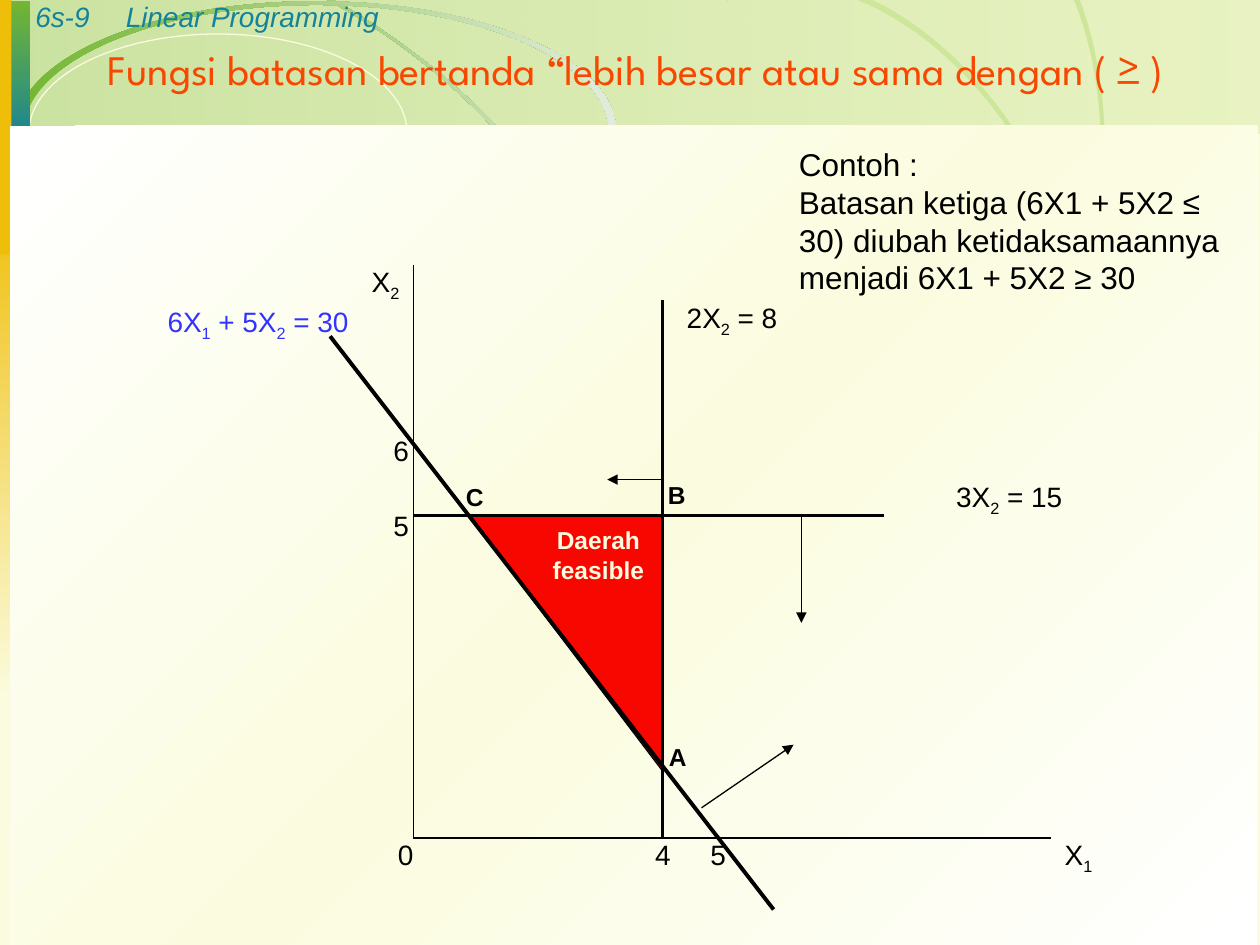
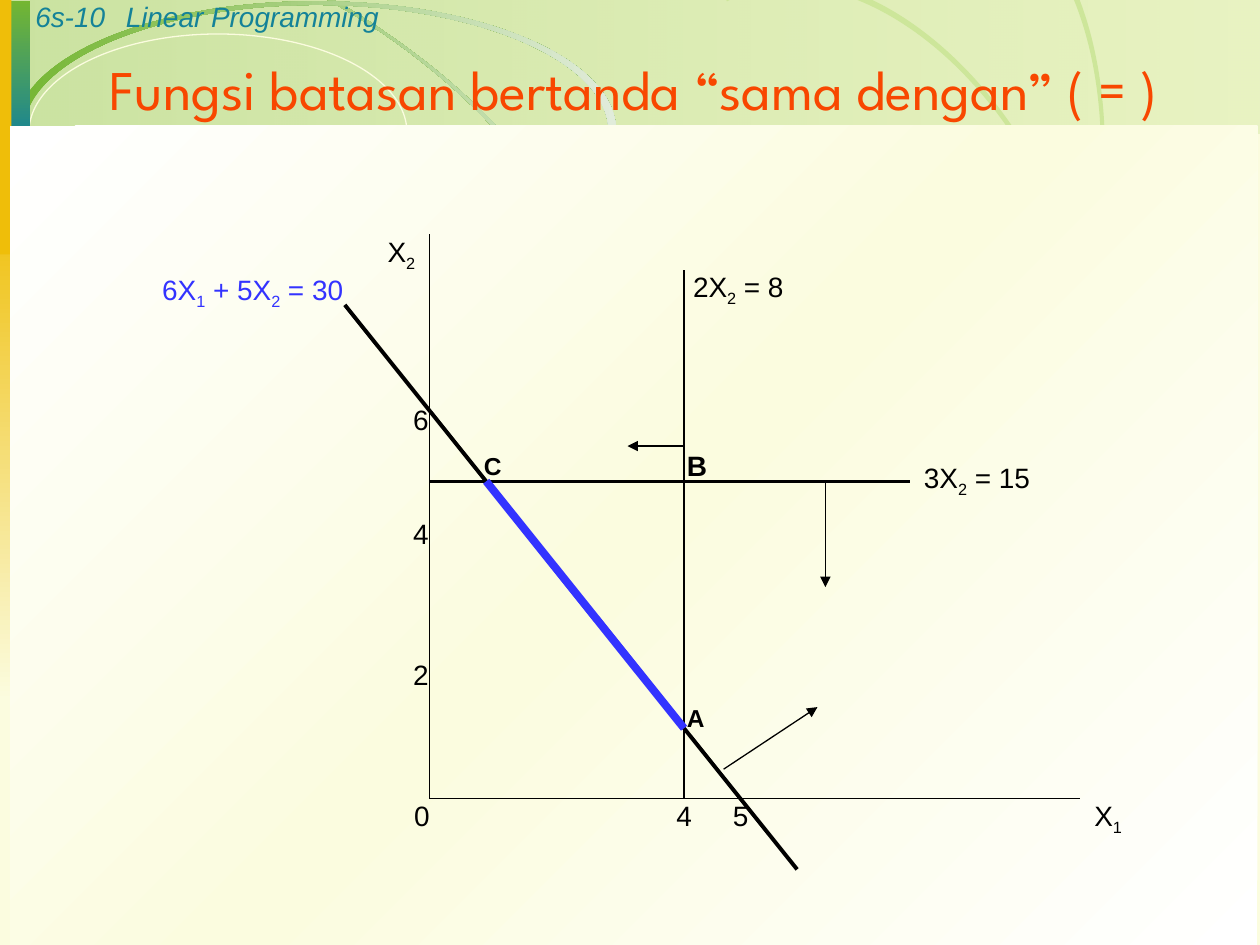
from lxml import etree
from pptx import Presentation
from pptx.dml.color import RGBColor
from pptx.enum.shapes import MSO_CONNECTOR as CONN, MSO_SHAPE as SHAPE
from pptx.enum.text import MSO_ANCHOR as ANCHOR, PP_ALIGN as ALIGN
from pptx.oxml.ns import qn
from pptx.util import Inches, Pt

W, H = 10, 7.5
BODY, HEADING = "Arial", "League Spartan"
COLORS = {
    "cream": "FBFCDF", "white": "FFFFFF", "black": "000000", "green": "74B632",
    "lime": "BCDD7B", "mist": "E1ECDB", "leaf": "CDE69A", "teal": "148298",
    "gold": "EFBE09", "orange": "F84700", "red": "F80600", "blue": "3333FF",
}

RIBBONS = [
    ((0.16, 0.11, 4.77, 1.99), 17.5, ("green", "mist"),
     [(0.33, 0.41), (0.49, -0.1, 1.61, -0.2, 2.84, 0.18), (4.06, 0.57, 4.92, 1.29, 4.76, 1.8),
      (4.82, 1.82), (4.99, 1.3, 4.1, 0.55, 2.84, 0.16), (1.59, -0.24, 0.43, -0.14, 0.27, 0.39)]),
    ((5.07, 0.24, 4.77, 2.59), 318.2, ("leaf",),
     [(5.73, 3.08), (6.19, 3.6, 7.34, 3.33, 8.3, 2.48), (9.25, 1.62, 9.65, 0.51, 9.19, -0.01),
      (9.24, -0.05), (9.71, 0.48, 9.3, 1.62, 8.32, 2.5), (7.34, 3.38, 6.16, 3.66, 5.68, 3.13)]),
    ((4.5, 0.52, 4.77, 3.06), 300.7, ("leaf",),
     [(5.7, 4.04), (6.41, 4.46, 7.51, 3.91, 8.17, 2.81), (8.82, 1.71, 8.78, 0.47, 8.07, 0.05),
      (8.1, 0), (8.83, 0.43, 8.87, 1.7, 8.2, 2.83), (7.53, 3.96, 6.39, 4.53, 5.67, 4.1)]),
    ((0.12, 0.01, 4.77, 2.07), 0, ("green", "mist"),
     [(0.19, 1.04), (0.19, 0.49, 1.23, 0.04, 2.51, 0.04), (3.79, 0.04, 4.83, 0.49, 4.83, 1.04),
      (4.89, 1.04), (4.89, 0.47, 3.83, 0.01, 2.51, 0.01), (1.19, 0.01, 0.12, 0.47, 0.12, 1.04)]),
]


def rgb(name):
    return RGBColor.from_string(COLORS[name])


def paint(sp, names, angle=0, alphas=None):
    sp.shadow.inherit = False
    if len(names) == 1:
        sp.fill.solid()
        sp.fill.fore_color.rgb = rgb(names[0])
        return
    sp.fill.gradient()
    grad = sp._element.spPr.find(qn("a:gradFill"))
    for child in list(grad):
        grad.remove(child)
    stops = etree.SubElement(grad, qn("a:gsLst"))
    for i, name in enumerate(names):
        stop = etree.SubElement(stops, qn("a:gs"), pos=str(100000 * i // (len(names) - 1)))
        color = etree.SubElement(stop, qn("a:srgbClr"), val=COLORS[name])
        if alphas:
            etree.SubElement(color, qn("a:alpha"), val=str(alphas[i] * 1000))
    etree.SubElement(grad, qn("a:lin"), ang=str(angle * 60000), scaled="0")


def add_block(s, box, names, angle=0, alphas=None):
    sp = s.shapes.add_shape(SHAPE.RECTANGLE, *map(Inches, box))
    paint(sp, names, angle, alphas)
    sp.line.fill.background()


def add_ribbon(s, box, turn, names, outline):
    left, top, width, height = map(Inches, box)
    builder = s.shapes.build_freeform(left, top)
    builder.add_line_segments([(left + width, top), (left + width, top + height)])
    sp = builder.convert_to_shape()
    curve = next(sp._element.iter(qn("a:path")))
    for child in list(curve):
        curve.remove(child)
    curve.set("w", str(width))
    curve.set("h", str(height))
    for i, step in enumerate(outline):
        tag = "a:moveTo" if i == 0 else "a:lnTo" if len(step) == 2 else "a:cubicBezTo"
        segment = etree.SubElement(curve, qn(tag))
        for x, y in zip(step[::2], step[1::2]):
            etree.SubElement(segment, qn("a:pt"), x=str(Inches(x) - left), y=str(Inches(y) - top))
    etree.SubElement(curve, qn("a:close"))
    sp.rotation = turn
    paint(sp, names)
    sp.line.fill.background()


def add_text(s, box, lines, size, color="black", font=BODY, align=ALIGN.LEFT,
             anchor=ANCHOR.TOP, bold=False, italic=False, left=0, right=0):
    tf = s.shapes.add_textbox(*map(Inches, box)).text_frame
    tf.word_wrap = True
    tf.vertical_anchor = anchor
    tf.margin_left, tf.margin_right = Inches(left), Inches(right)
    tf.margin_top = tf.margin_bottom = 0
    for i, line in enumerate(lines):
        p = tf.paragraphs[0] if i == 0 else tf.add_paragraph()
        p.alignment = align
        head, *tails = line.split("_")
        runs = [(head, False)]
        for tail in tails:
            runs += [(tail[0], True), (tail[1:], False)]
        for text, lowered in runs:
            if not text:
                continue
            r = p.add_run()
            r.text = text
            r.font.name, r.font.size = font, Pt(size)
            r.font.bold, r.font.italic = bold, italic
            r.font.color.rgb = rgb(color)
            if lowered:
                r._r.get_or_add_rPr().set("baseline", "-25000")


class Plot:
    COLS, ROWS = 11.5, 8

    def __init__(self, s, left, bottom, width, height):
        self.s, self.left, self.bottom = s, left, bottom
        self.col, self.row = width / self.COLS, height / self.ROWS

    def at(self, x, y):
        return self.left + x * self.col, self.bottom - y * self.row

    def line(self, start, end, width=0.75, color="black", arrow=False):
        ends = map(Inches, (*self.at(*start), *self.at(*end)))
        cn = self.s.shapes.add_connector(CONN.STRAIGHT, *ends)
        cn.line.width = Pt(width)
        cn.line.color.rgb = rgb(color)
        if arrow:
            etree.SubElement(cn.line._get_or_add_ln(), qn("a:tailEnd"), type="triangle")
        etree.SubElement(cn._element.spPr, qn("a:effectLst"))

    def label(self, text, x, y, cols=1, size=16, align=ALIGN.CENTER, **style):
        box = (*self.at(x, y), cols * self.col, self.row)
        add_text(self.s, box, [text], size, align=align, **style)

    def feasible_area(self):
        box = (*self.at(1, 4.5), 3.5 * self.col, 3.57 * self.row)
        sp = self.s.shapes.add_shape(SHAPE.RIGHT_TRIANGLE, *map(Inches, box))
        sp.rotation = 180
        paint(sp, ("red",))
        sp.line.color.rgb = rgb("black")
        sp.line.width = Pt(0.75)
        add_text(self.s, (*self.at(2.34, 4.36), 2 * self.col, 1.2 * self.row),
                 ["Daerah", "feasible"], 14, "cream", align=ALIGN.CENTER, bold=True)

    def constraints(self):
        self.line((0, 0), (self.COLS, 0))
        self.line((0, self.ROWS), (0, 0))
        self.line((4.5, 0), (4.5, 7.5), 1.5)
        self.line((-1.5, 7), (6.5, -1), 2.25)
        self.line((0, 4.5), (8.5, 4.5), 1.5)
        for start, end in [((7, 4.5), (7, 3)), ((5.2, 0.42), (6.86, 1.3)), ((4.5, 5), (3.5, 5))]:
            self.line(start, end, arrow=True)
        self.label("X_2", -1, self.ROWS)
        self.label("X_1", self.COLS, 0)
        self.label("0", -1, 0, align=ALIGN.RIGHT)
        for text, x in [("4", 4), ("5", 5)]:
            self.label(text, x, 0)

    def ticks(self, heights, x):
        for text, y in heights:
            self.label(text, x, y, align=ALIGN.RIGHT)

    def corners(self, a, b, c, b_size=14):
        self.label("A", *a, size=14, bold=True)
        self.label("B", *b, size=b_size, align=ALIGN.LEFT, bold=True, left=0.04)
        self.label("C", *c, size=14, align=ALIGN.LEFT, bold=True)

    def equations(self, upright, level, slanted):
        self.label("2X_2 = 8", *upright)
        self.label("3X_2 = 15", *level)
        self.label("6X_1 + 5X_2 = 30", *slanted, color="blue")


def add_slide(prs, number, title, title_box, title_size):
    s = prs.slides.add_slide(prs.slide_layouts[6])
    s.background.fill.solid()
    s.background.fill.fore_color.rgb = rgb("cream")
    add_block(s, (0.01, 0, W, 1.06), ("green", "lime"), alphas=(36, 29))
    add_ribbon(s, *RIBBONS[0])
    arc = s.shapes.add_shape(SHAPE.OVAL, *map(Inches, (0.23, 0.27, 3, 1.56)))
    arc.shadow.inherit = False
    arc.fill.background()
    arc.line.color.rgb = rgb("cream")
    arc.line.width = Pt(0.75)
    add_block(s, (0, 1.55, 0.22, 4.01), ("gold", "cream"), 90)
    for ribbon in RIBBONS[1:]:
        add_ribbon(s, *ribbon)
    add_block(s, (0.01, 0.01, 0.23, 1.14), ("green", "teal"), 90)
    add_block(s, (0, 0, 0.09, 2.02), ("gold",))
    add_block(s, (0.08, 1, 9.9, 6.5), ("white", "cream", "white"), 45)
    for text, left, width, inset in [(number, 0.06, 1.08, 0.22),
                                     ("Linear Programming", 0.9, 8.67, 0.1)]:
        add_text(s, (left, 0, width, 0.27), [text], 16, "teal", italic=True, left=inset)
    add_text(s, title_box, [title], title_size, "orange", HEADING,
             ALIGN.CENTER, ANCHOR.MIDDLE, left=0.1, right=0.1)
    return s


def main():
    prs = Presentation()
    prs.slide_width, prs.slide_height = Inches(W), Inches(H)

    s = add_slide(prs, "6s-9", "Fungsi batasan bertanda “lebih besar atau sama dengan ( ≥ )",
                  (0.43, 0.25, 9.23, 0.59), 24)
    plot = Plot(s, 3.28, 6.65, 5.06, 4.55)
    plot.feasible_area()
    plot.constraints()
    plot.ticks([("6", 5.64), ("5", 4.59)], -1.08)
    plot.corners((4.27, 1.34), (4.5, 5), (0.95, 4.96))
    plot.equations((4.5, 7.5, 2.5), (9, 5, 3.5), (-5.05, 7.45, 4.5))
    add_text(s, (6.34, 1.15, 3.58, 1.31),
             ["Contoh :", "Batasan ketiga (6X1 + 5X2 ≤ 30) diubah ketidaksamaannya "
              "menjadi 6X1 + 5X2 ≥ 30"], 18, right=0.1)

    s = add_slide(prs, "6s-10", "Fungsi batasan bertanda “sama dengan” ( = )",
                  (0.43, 0.25, 9.21, 0.9), 32)
    plot = Plot(s, 3.41, 6.34, 5.16, 4.48)
    plot.constraints()
    plot.line((1, 4.5), (4.5, 1), 4.5, "blue")
    plot.ticks([("2", 2), ("4", 4), ("6", 5.62)], -1.02)
    plot.corners((4.21, 1.36), (4.46, 4.96), (0.96, 4.93), b_size=16)
    plot.equations((4.21, 7.5, 2.5), (7.93, 4.79, 3.5), (-6.13, 7.46, 6))

    prs.save("out.pptx")


if __name__ == "__main__":
    main()
